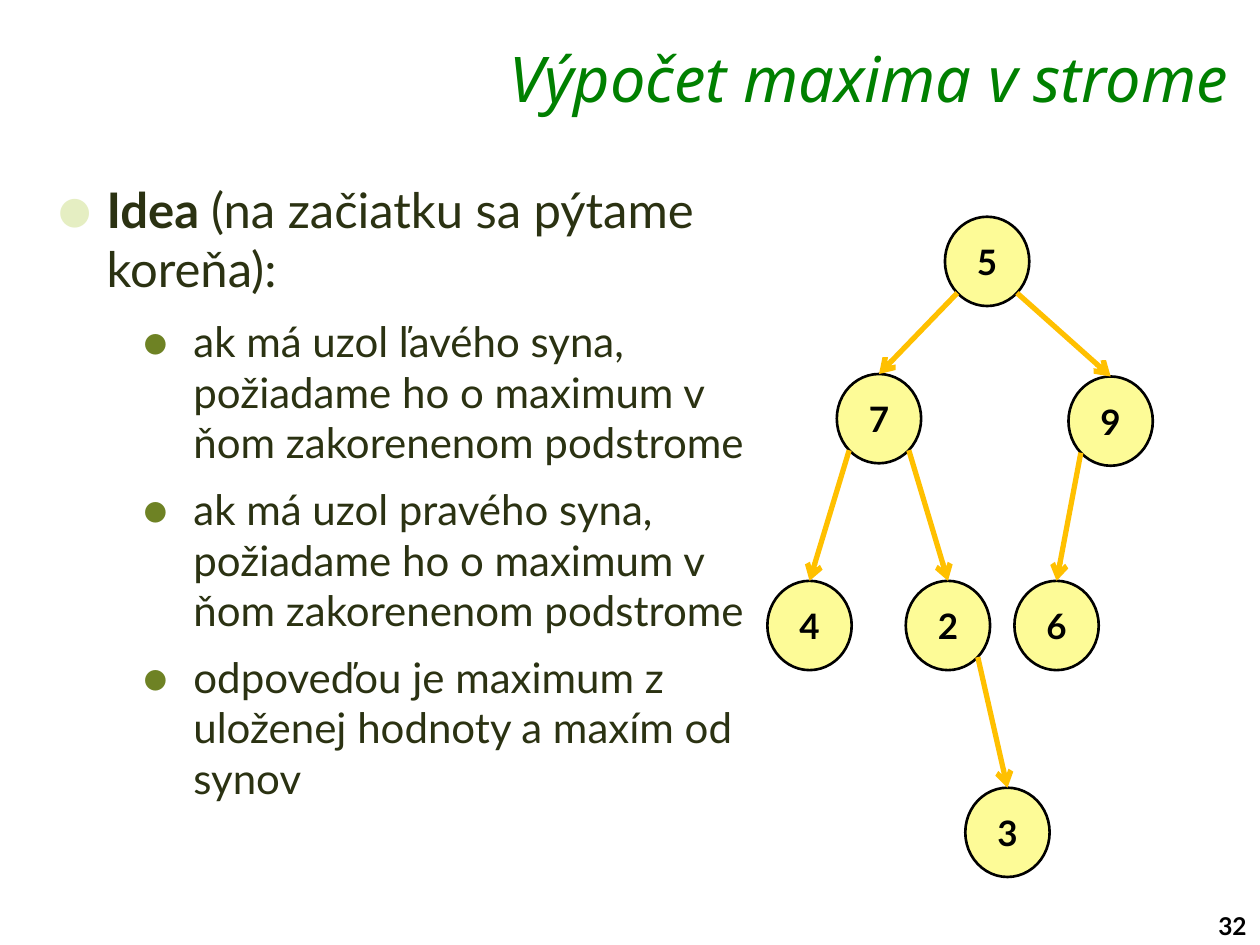
"""Build the slide on finding the maximum in a binary tree."""
from math import sqrt
from lxml.etree import SubElement
from pptx import Presentation
from pptx.dml.color import RGBColor
from pptx.enum.shapes import MSO_CONNECTOR, MSO_SHAPE
from pptx.enum.text import MSO_ANCHOR, PP_ALIGN
from pptx.oxml.ns import qn
from pptx.util import Cm, Pt

TITLE = "Výpočet maxima v strome"
PAGE = "32"
IDEA = [
    (0, [("Idea ", True), ("(na začiatku sa pýtame koreňa):", False)]),
    (1, [("ak má uzol ľavého syna, požiadame ho o maximum v ňom zakorenenom podstrome", False)]),
    (1, [("ak má uzol pravého syna, požiadame ho o maximum v ňom zakorenenom podstrome", False)]),
    (1, [("odpoveďou je maximum z uloženej hodnoty a maxím od synov", False)]),
]
LEVELS = [
    {"size": 28, "left": 0.99, "hang": 1.0, "color": "E5EEC2", "scale": 120},
    {"size": 24, "left": 2.74, "hang": 1.02, "color": "6E8224", "scale": 100},
]
NODES = {
    "5": (19.05, 4.37), "7": (16.87, 7.54), "9": (21.54, 7.59),
    "4": (15.47, 11.71), "2": (18.26, 11.71), "6": (20.45, 11.71),
    "3": (19.46, 15.88),
}
LEFT, RIGHT = -1, 1
EDGES = [("4", "7", LEFT), ("6", "9", LEFT), ("3", "2", RIGHT),
         ("7", "5", LEFT), ("9", "5", RIGHT), ("2", "7", RIGHT)]
WIDE, HIGH = 1.7, 1.8


def paint(code):
    return RGBColor.from_string(code)


def style(run, size, color, face="Lato", bold=False, italic=False):
    font = run.font
    font.name, font.size = face, Pt(size)
    font.bold, font.italic = bold, italic
    font.color.rgb = paint(color)


def add_box(slide, left, top, wide, high, wrap=True):
    box = slide.shapes.add_textbox(Cm(left), Cm(top), Cm(wide), Cm(high))
    box.text_frame.word_wrap = wrap
    return box.text_frame


def add_dot(para, rule):
    props = para._p.get_or_add_pPr()
    props.set("marL", str(Cm(rule["left"])))
    props.set("indent", str(-Cm(rule["hang"])))
    tint = SubElement(props, qn("a:buClr"))
    SubElement(tint, qn("a:srgbClr"), val=rule["color"])
    SubElement(props, qn("a:buSzPct"), val=str(rule["scale"] * 1000))
    SubElement(props, qn("a:buFont"), typeface="Lato")
    SubElement(props, qn("a:buChar"), char="●")


def add_idea(slide):
    frame = add_box(slide, 0.91, 3.5, 14.38, 13.34)
    for index, (level, parts) in enumerate(IDEA):
        para = frame.add_paragraph() if index else frame.paragraphs[0]
        rule = LEVELS[level]
        para.level = level
        add_dot(para, rule)
        gap = Pt(rule["size"] * 0.2)
        para.space_after = gap
        if index:
            para.space_before = gap
        for text, bold in parts:
            run = para.add_run()
            run.text = text
            style(run, rule["size"], "2B3212", bold=bold)


def add_node(slide, label, left, top):
    node = slide.shapes.add_shape(MSO_SHAPE.FLOWCHART_CONNECTOR,
                                  Cm(left), Cm(top), Cm(WIDE), Cm(HIGH))
    node.shadow.inherit = False
    node.fill.solid()
    node.fill.fore_color.rgb = paint("FDFB97")
    node.line.color.rgb = paint("000000")
    node.line.width = Pt(1.5)
    frame = node.text_frame
    frame.text = label
    frame.vertical_anchor = MSO_ANCHOR.MIDDLE
    para = frame.paragraphs[0]
    para.alignment = PP_ALIGN.CENTER
    style(para.runs[0], 20, "000000", bold=True)


def add_edge(slide, child, parent, side):
    left, top = NODES[child]
    x, y = NODES[parent]
    end_x = x + WIDE / 2 * (1 + side / sqrt(2))
    end_y = y + HIGH / 2 * (1 + 1 / sqrt(2))
    edge = slide.shapes.add_connector(MSO_CONNECTOR.STRAIGHT, Cm(left + WIDE / 2),
                                      Cm(top), Cm(end_x), Cm(end_y))
    edge.line.color.rgb = paint("FFC000")
    edge.line.width = Pt(3)
    SubElement(edge.line._get_or_add_ln(), qn("a:headEnd"), type="arrow")
    SubElement(edge._element.spPr, qn("a:effectLst"))


def main():
    deck = Presentation()
    deck.slide_width, deck.slide_height = Cm(25.4), Cm(19.05)
    slide = deck.slides.add_slide(deck.slide_layouts[6])

    frame = add_box(slide, 24.31, 18.24, 1.3, 0.84, wrap=False)
    frame.text = PAGE
    style(frame.paragraphs[0].runs[0], 14, "000000", bold=True)

    frame = add_box(slide, 5.82, 0.79, 19.18, 1.47)
    frame.margin_top = frame.margin_bottom = 0
    frame.text = TITLE
    para = frame.paragraphs[0]
    para.alignment = PP_ALIGN.RIGHT
    style(para.runs[0], 36, "008000", face="Noto Sans", italic=True)

    add_idea(slide)
    for label, place in NODES.items():
        add_node(slide, label, *place)
    for edge in EDGES:
        add_edge(slide, *edge)
    deck.save("out.pptx")


if __name__ == "__main__":
    main()
